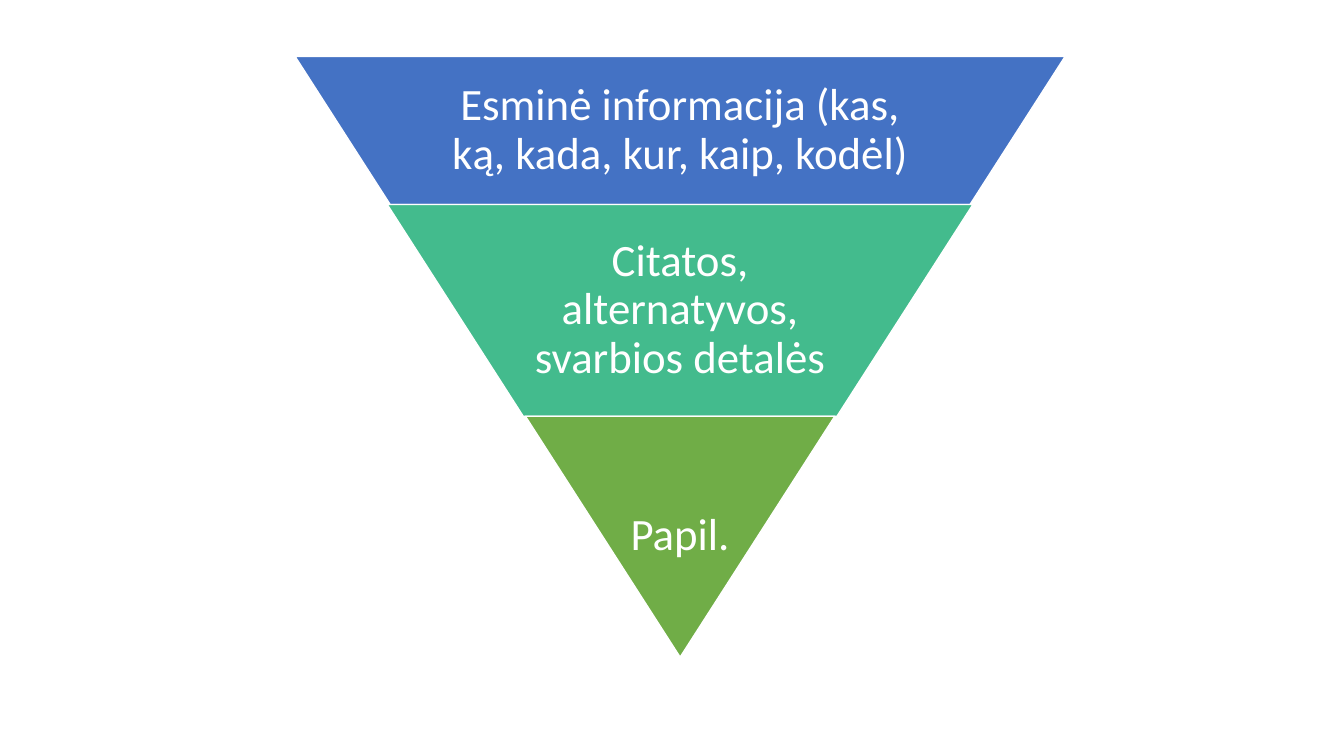
from pptx import Presentation
from pptx import util as u
from pptx.dml.color import RGBColor
from pptx.enum import shapes, text


def color(fmt, value):
    fmt.rgb = RGBColor.from_string(value)


prs = Presentation()
prs.slide_width, prs.slide_height = u.Pt(960), u.Pt(540)
s = prs.slides.add_slide(prs.slide_layouts[6])

CENTER = 485.8
SLOPE = 0.642  # side inset per unit of height
top = 40.3

# Bands from top to bottom: wording, fill, width, height, text share of width
bands = [
    ("Esminė informacija (kas, ką, kada, kur, kaip, kodėl)", "4472C4", 550, 105.8, 0.65),
    ("Citatos, alternatyvos, svarbios detalės", "43BB8D", 418.3, 151.2, 0.65),
    ("Papil.", "70AD47", 221, 171.4, 1),
]

for words, fill, width, height, share in bands:
    # Upside-down trapezoid
    sp = s.shapes.add_shape(shapes.MSO_SHAPE.TRAPEZOID, u.Pt(CENTER - width / 2),
                            u.Pt(top), u.Pt(width), u.Pt(height))
    sp.rotation = 180
    sp.adjustments[0] = SLOPE
    sp.shadow.inherit = False
    sp.fill.solid()
    color(sp.fill.fore_color, fill)
    color(sp.line.color, "FFFFFF")
    sp.line.width = u.Pt(1)

    # Upright label over the band
    label_width = width * share
    tb = s.shapes.add_textbox(u.Pt(CENTER - label_width / 2), u.Pt(top),
                              u.Pt(label_width), u.Pt(height))
    tf = tb.text_frame
    tf.word_wrap = True
    tf.vertical_anchor = text.MSO_ANCHOR.MIDDLE
    tf.margin_left = tf.margin_right = tf.margin_top = tf.margin_bottom = u.Pt(3)
    p = tf.paragraphs[0]
    p.text = words
    p.alignment = text.PP_ALIGN.CENTER
    p.line_spacing = 0.9
    p.font.name = "Calibri"
    p.font.size = u.Pt(32)
    color(p.font.color, "FFFFFF")

    top += height

prs.save("out.pptx")
